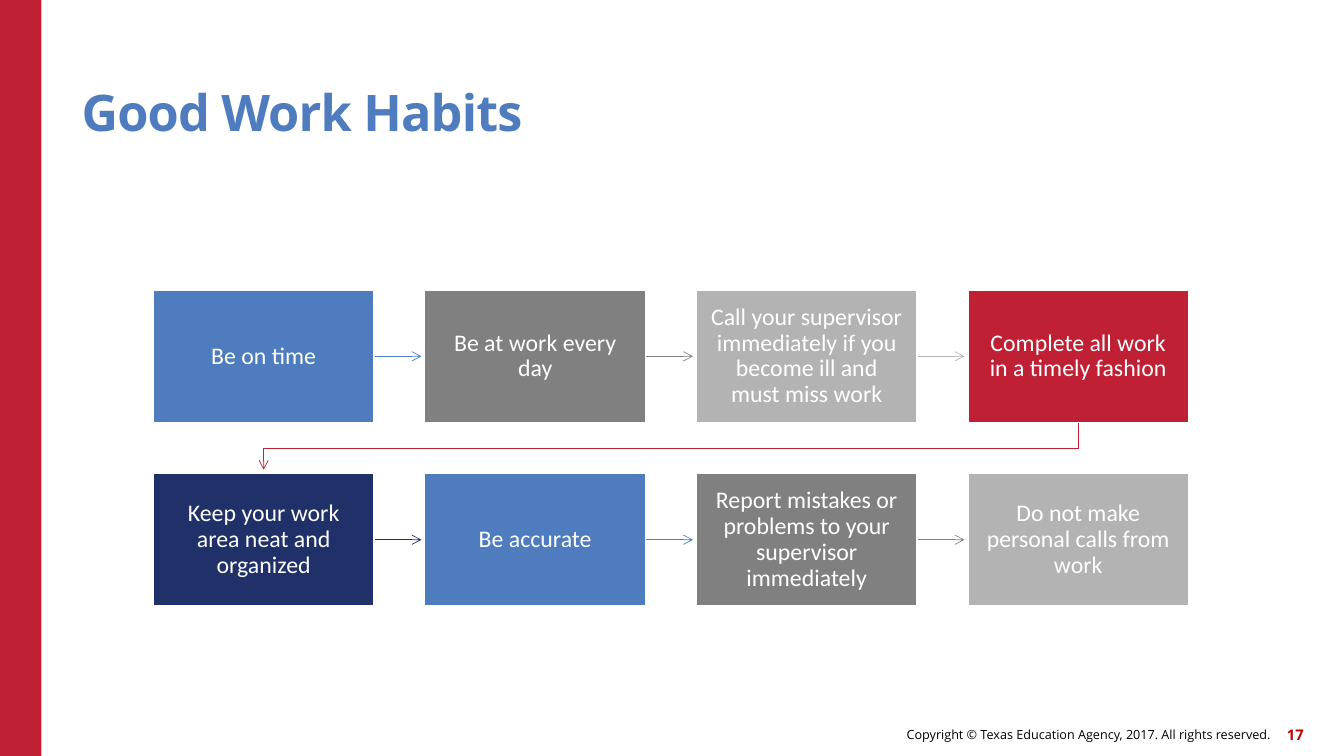
from lxml import etree
from pptx import Presentation, util as u
from pptx.dml.color import RGBColor
from pptx.enum import shapes, text
from pptx.oxml.ns import qn

BLUE, GRAY, SILVER, RED, NAVY = "4E7CBE", "808080", "B3B3B3", "C02033", "203069"
PALETTE = [BLUE, GRAY, SILVER, RED, NAVY]
HABITS = [
    "Be on time",
    "Be at work every day",
    "Call your supervisor immediately if you become ill and must miss work",
    "Complete all work in a timely fashion",
    "Keep your work area neat and organized",
    "Be accurate",
    "Report mistakes or problems to your supervisor immediately",
    "Do not make personal calls from work",
]

# Grid of habit boxes, in inches
COLUMNS = 4
LEFT, TOP = 1.52, 2.88
BOX_WIDTH, BOX_HEIGHT = 2.19, 1.31
COLUMN_STEP, ROW_STEP = 2.693, 1.82
ARROW_LENGTH = 0.47


def colour(value):
    return RGBColor.from_string(value)


def place(shape, left, top, width, height):
    shape.left, shape.top = u.Inches(left), u.Inches(top)
    shape.width, shape.height = u.Inches(width), u.Inches(height)


def write(shape, words, font, size, hue, align, anchor, inset=0, bold=False):
    """Fill a shape with one evenly formatted paragraph."""
    frame = shape.text_frame
    frame.word_wrap = True
    frame.auto_size = text.MSO_AUTO_SIZE.NONE
    frame.vertical_anchor = anchor
    frame.margin_left = frame.margin_right = u.Inches(inset)
    frame.margin_top = frame.margin_bottom = u.Inches(inset)
    frame.text = words
    para = frame.paragraphs[0]
    para.alignment = align
    para.font.name, para.font.size = font, u.Pt(size)
    para.font.bold = bold
    para.font.color.rgb = colour(hue)
    return para


def add_title(page, words):
    title = page.shapes.title
    place(title, 0.81, 0.45, 11, 0.96)
    para = write(title, words, "Open Sans", 36, BLUE, text.PP_ALIGN.LEFT,
                 text.MSO_ANCHOR.BOTTOM, bold=True)
    para.line_spacing = 0.9
    para.runs[0].font.element.set("spc", "-60") if hasattr(
        para.runs[0].font, "element") else para.runs[0]._r.get_or_add_rPr().set("spc", "-60")


def add_footer(page, words, left, width, size, hue, bold=False):
    box = page.shapes.add_textbox(0, 0, 0, 0)
    place(box, left, 7.125, width, 0.32)
    write(box, words, "Open Sans", size, hue, text.PP_ALIGN.RIGHT,
          text.MSO_ANCHOR.MIDDLE, bold=bold)


def add_rectangle(page, left, top, width, height, fill):
    box = page.shapes.add_shape(shapes.MSO_SHAPE.RECTANGLE, 0, 0, 0, 0)
    place(box, left, top, width, height)
    box.shadow.inherit = False
    box.fill.solid()
    box.fill.fore_color.rgb = colour(fill)
    box.line.fill.background()
    return box


def add_habit(page, words, left, top, fill):
    box = add_rectangle(page, left, top, BOX_WIDTH, BOX_HEIGHT, fill)
    box.line.color.rgb = colour("FFFFFF")
    box.line.width = u.Pt(1)
    para = write(box, words, "Calibri", 17, "FFFFFF", text.PP_ALIGN.CENTER,
                 text.MSO_ANCHOR.MIDDLE, inset=0.13)
    para.line_spacing = 0.9


def style_arrow(arrow, hue):
    """Thin line with an open arrowhead at its end and no shadow."""
    arrow.line.color.rgb = colour(hue)
    arrow.line.width = u.Pt(0.5)
    properties = arrow._element.spPr
    head = etree.SubElement(properties.find(qn("a:ln")), qn("a:tailEnd"))
    head.set("type", "arrow")
    etree.SubElement(properties, qn("a:effectLst"))


def add_next_arrow(page, left, top, hue):
    start, middle = left + BOX_WIDTH, top + BOX_HEIGHT / 2
    arrow = page.shapes.add_connector(
        shapes.MSO_CONNECTOR.STRAIGHT, u.Inches(start), u.Inches(middle),
        u.Inches(start + ARROW_LENGTH), u.Inches(middle))
    style_arrow(arrow, hue)


def add_wrap_arrow(page, left, top, hue):
    """Lead from the last box of a row to the first box of the next."""
    start_x, end_x = left + BOX_WIDTH / 2, LEFT + BOX_WIDTH / 2
    start_y = top + BOX_HEIGHT
    bend_y = (start_y + top + ROW_STEP) / 2
    points = [(start_x, start_y), (start_x, bend_y), (end_x, bend_y),
              (end_x, start_y + ARROW_LENGTH)]
    corners = [(u.Inches(x), u.Inches(y)) for x, y in points]
    builder = page.shapes.build_freeform(*corners[0])
    builder.add_line_segments(corners[1:], close=False)
    arrow = builder.convert_to_shape()
    arrow.fill.background()
    style_arrow(arrow, hue)


def add_habit_flow(page):
    for index, words in enumerate(HABITS):
        row, column = divmod(index, COLUMNS)
        left, top = LEFT + column * COLUMN_STEP, TOP + row * ROW_STEP
        hue = PALETTE[index % len(PALETTE)]
        if index < len(HABITS) - 1:
            add_arrow = add_wrap_arrow if column == COLUMNS - 1 else add_next_arrow
            add_arrow(page, left, top, hue)
        add_habit(page, words, left, top, hue)


def main():
    deck = Presentation()
    deck.slide_width, deck.slide_height = u.Inches(13.33), u.Inches(7.5)
    page = deck.slides.add_slide(deck.slide_layouts[5])

    # Side band and footer
    add_rectangle(page, 0, 0, 0.41, 7.5, RED)
    add_footer(page, "Copyright © Texas Education Agency, 2017. All rights reserved.",
               6.14, 6.46, 9, "000000")
    add_footer(page, "17", 12.51, 0.42, 10.5, "C00000", bold=True)

    # Title and flow of habits
    add_title(page, "Good Work Habits")
    add_habit_flow(page)
    deck.save("out.pptx")


if __name__ == "__main__":
    main()
